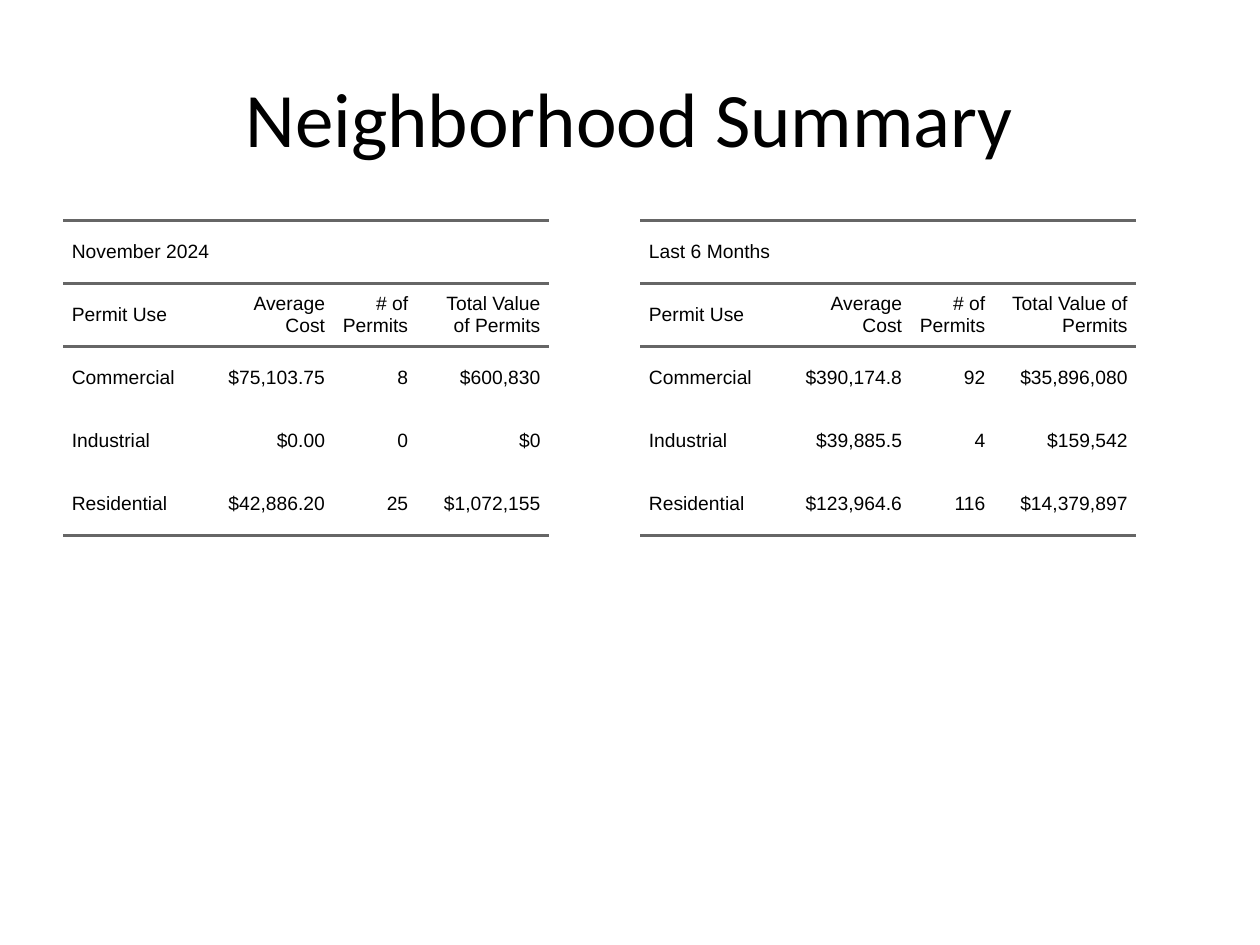
import pptx
import pptx.util
import pptx.dml.color
import pptx.enum.text
import pptx.oxml
import pptx.oxml.ns
from pptx.util import Inches

COLORS = {"text": "000000", "rule": "666666"}
ALIGN = pptx.enum.text.PP_ALIGN
MIDDLE = pptx.enum.text.MSO_ANCHOR.MIDDLE
PADDING = Inches(0.07)


def style_font(font, name, size):
    font.name = name
    font.size = pptx.util.Pt(size)
    font.color.rgb = pptx.dml.color.RGBColor.from_string(COLORS["text"])


def add_border(cell, side, ruled):
    namespace = pptx.oxml.ns.nsdecls("a")
    if ruled:
        width = pptx.util.Pt(1.5)
        paint = f'<a:solidFill><a:srgbClr val="{COLORS["rule"]}"/></a:solidFill>'
    else:
        width, paint = 0, "<a:noFill/>"
    cell._tc.get_or_add_tcPr().append(pptx.oxml.parse_xml(
        f'<a:ln{side} {namespace} w="{int(width)}">{paint}</a:ln{side}>'))


presentation = pptx.Presentation()
presentation.slide_width = Inches(10)
presentation.slide_height = Inches(7.5)
slide = presentation.slides.add_slide(presentation.slide_layouts[6])

# Permit tables: period, left edge, column widths, figures
HEADINGS = ["Permit Use", "Average Cost", "# of Permits", "Total Value of Permits"]
periods = [
    ("November 2024", 0.5, [1.1, 1.05, 0.66, 1.05], [
        ["Commercial", "$75,103.75", "8", "$600,830"],
        ["Industrial", "$0.00", "0", "$0"],
        ["Residential", "$42,886.20", "25", "$1,072,155"],
    ]),
    ("Last 6 Months", 5.08, [1.1, 1.05, 0.66, 1.13], [
        ["Commercial", "$390,174.8", "92", "$35,896,080"],
        ["Industrial", "$39,885.5", "4", "$159,542"],
        ["Residential", "$123,964.6", "116", "$14,379,897"],
    ]),
]
ROW_HEIGHT = 0.5
RULED_EDGES = {0, 1, 2, 5}  # row edges that carry a rule, counted from the top
cell_format = {
    "margin_left": 0, "margin_right": 0,
    "margin_top": PADDING, "margin_bottom": PADDING,
    "vertical_anchor": MIDDLE,
}
paragraph_format = {"space_before": pptx.util.Pt(5), "space_after": pptx.util.Pt(5)}

for period, left, widths, figures in periods:
    rows = [[period, "", "", ""], HEADINGS] + figures
    permits = slide.shapes.add_table(
        len(rows), len(widths), Inches(left), Inches(1.75),
        Inches(sum(widths)), Inches(ROW_HEIGHT * len(rows))).table
    permits.first_row = False
    permits.horz_banding = False
    for column, width in zip(permits.columns, widths):
        column.width = Inches(width)
    for row in permits.rows:
        row.height = Inches(ROW_HEIGHT)
    permits.cell(0, 0).merge(permits.cell(0, len(widths) - 1))

    for r, row_texts in enumerate(rows):
        for c, text in enumerate(row_texts):
            cell = permits.cell(r, c)
            for attribute, value in cell_format.items():
                setattr(cell, attribute, value)
            for side, ruled in [("L", False), ("R", False),
                                ("T", r in RULED_EDGES),
                                ("B", r + 1 in RULED_EDGES)]:
                add_border(cell, side, ruled)
            cell.fill.background()
            if not text:
                continue
            paragraph = cell.text_frame.paragraphs[0]
            for attribute, value in paragraph_format.items():
                setattr(paragraph, attribute, value)
            paragraph.alignment = ALIGN.RIGHT if c else ALIGN.LEFT
            indents = paragraph._p.get_or_add_pPr()
            for attribute, value in {"marL": PADDING, "marR": PADDING, "indent": 0}.items():
                indents.set(attribute, str(int(value)))
            entry = paragraph.add_run()
            entry.text = text
            style_font(entry.font, "Arial", 11)

# Title
title = slide.shapes.add_textbox(Inches(0.5), Inches(0.3), Inches(9), Inches(1.25))
title.text_frame.word_wrap = True
title.text_frame.vertical_anchor = MIDDLE
heading = title.text_frame.paragraphs[0]
heading.alignment = ALIGN.CENTER
heading_run = heading.add_run()
heading_run.text = "Neighborhood Summary"
style_font(heading_run.font, "Calibri", 44)

presentation.save("out.pptx")
